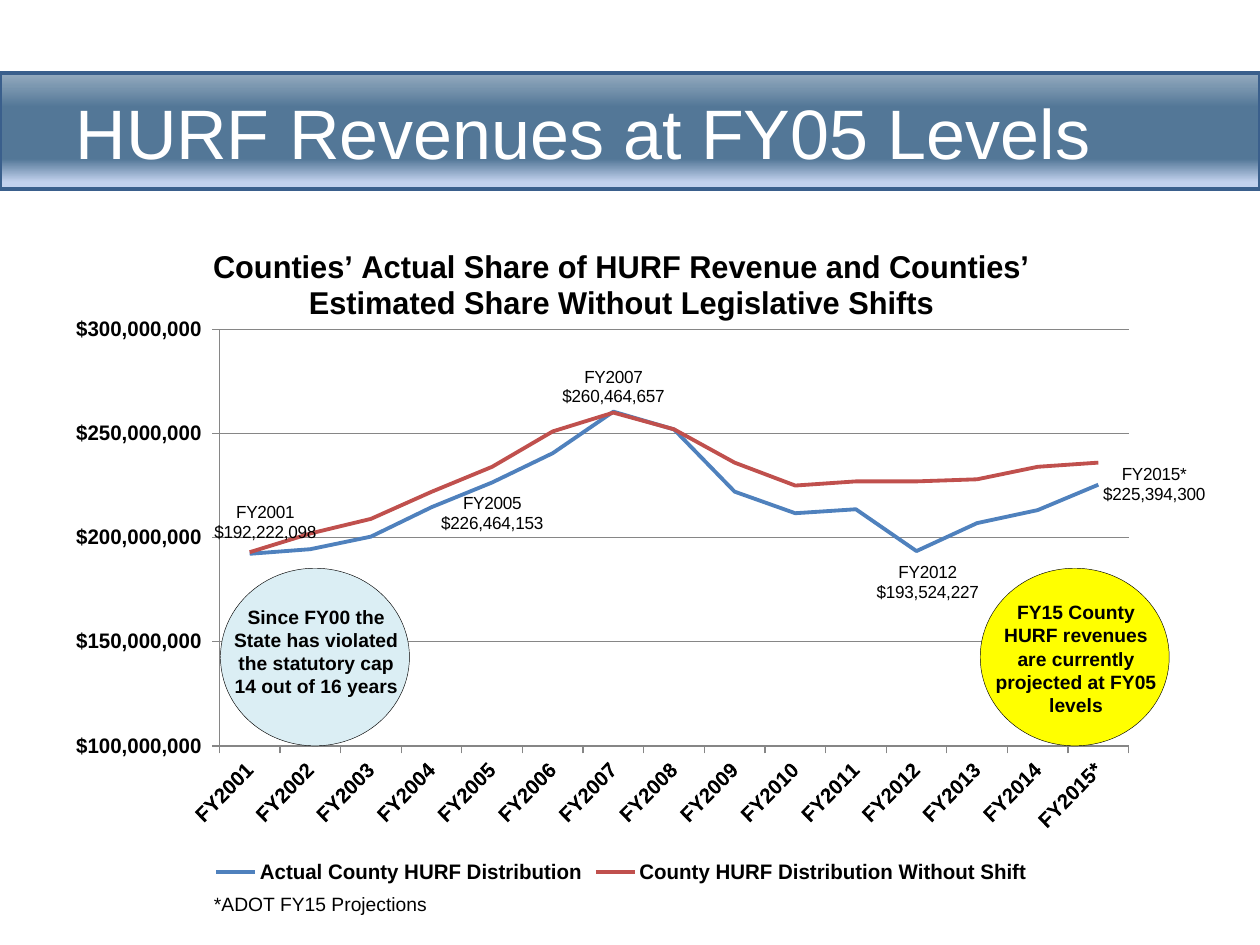
from dataclasses import dataclass

from lxml import etree
from pptx import Presentation
from pptx.chart.data import CategoryChartData
from pptx.dml.color import RGBColor
from pptx.enum.chart import (XL_CHART_TYPE, XL_LABEL_POSITION, XL_LEGEND_POSITION,
                             XL_MARKER_STYLE, XL_TICK_MARK)
from pptx.enum.shapes import MSO_SHAPE
from pptx.enum.text import MSO_ANCHOR, PP_ALIGN
from pptx.oxml import parse_xml
from pptx.oxml.ns import nsdecls, qn
from pptx.util import Inches, Pt

LINE = XL_CHART_TYPE.LINE
ABOVE, BELOW, RIGHT = XL_LABEL_POSITION.ABOVE, XL_LABEL_POSITION.BELOW, XL_LABEL_POSITION.RIGHT
BOTTOM = XL_LEGEND_POSITION.BOTTOM
NO_MARKER = XL_MARKER_STYLE.NONE
OUTSIDE, NO_TICK = XL_TICK_MARK.OUTSIDE, XL_TICK_MARK.NONE
RECT, OVAL = MSO_SHAPE.RECTANGLE, MSO_SHAPE.OVAL
TOP, MIDDLE = MSO_ANCHOR.TOP, MSO_ANCHOR.MIDDLE
LEFT, CENTER = PP_ALIGN.LEFT, PP_ALIGN.CENTER

FONT = "Arial"
BLACK = RGBColor(0x00, 0x00, 0x00)
WHITE = RGBColor(0xFF, 0xFF, 0xFF)
GRID_GRAY = RGBColor(0x86, 0x86, 0x86)
BAND_LINE = RGBColor(0x3A, 0x5F, 0x8C)
BLUE = RGBColor(0x4F, 0x81, 0xBD)
RED = RGBColor(0xC0, 0x50, 0x4D)
PALE_BLUE = RGBColor(0xDB, 0xEE, 0xF4)
YELLOW = RGBColor(0xFF, 0xFF, 0x00)
BAND_STOPS = [
    (2, RGBColor(0x91, 0xA8, 0xBD)),
    (29, RGBColor(0x53, 0x77, 0x97)),
    (74, RGBColor(0x53, 0x77, 0x97)),
    (94, RGBColor(0xC2, 0xD1, 0xED)),
]


@dataclass
class Series:
    name: str
    color: RGBColor
    values: list[int]


@dataclass
class PointLabel:
    index: int
    position: XL_LABEL_POSITION
    dx: float = 0  # shift as a share of the chart width
    dy: float = 0  # shift as a share of the chart height


@dataclass
class Callout:
    text: str
    fill: RGBColor
    left: float
    text_top: float
    text_height: float


YEARS = [f"FY{year}" for year in range(2001, 2015)] + ["FY2015*"]
SERIES = [
    Series("Actual County HURF Distribution", BLUE, [
        192222098, 194432532, 200465084, 214601120, 226464153,
        240538498, 260464657, 251942354, 222055667, 211692930,
        213605033, 193524227, 206965383, 213192319, 225394300]),
    Series("County HURF Distribution Without Shift", RED, [
        million * 1_000_000 for million in (
            193, 202, 209, 222, 234, 251, 260, 252, 236, 225, 227, 227, 228, 234, 236)]),
]
POINT_LABELS = [
    PointLabel(0, ABOVE, 0.014, -0.01),
    PointLabel(4, BELOW, 0, 0.01),
    PointLabel(6, ABOVE),
    PointLabel(11, BELOW, 0.01, 0.01),
    PointLabel(14, RIGHT),
]
PLOT_AREA = {"x": 0.14, "y": 0.163, "w": 0.814, "h": 0.624}
CALLOUTS = [
    Callout("Since FY00 the State has violated the statutory cap 14 out of 16 years",
            PALE_BLUE, 1.75, 4.59, 1.16),
    Callout("FY15 County HURF revenues are currently projected at FY05 levels",
            YELLOW, 7.78, 4.7, 1.05),
]


def style_font(font, size: float, bold: bool = False, color: RGBColor = BLACK) -> None:
    font.name, font.size, font.bold = FONT, Pt(size), bold
    font.color.rgb = color


def write(shape, text: str, *, size: float, bold: bool = False, color: RGBColor = BLACK,
          align=LEFT, anchor=TOP) -> None:
    tf = shape.text_frame
    tf.word_wrap = True
    tf.vertical_anchor = anchor
    p = tf.paragraphs[0]
    p.alignment = align
    r = p.add_run()
    r.text = text
    style_font(r.font, size, bold, color)


def add_box(s, left: float, top: float, width: float, height: float):
    return s.shapes.add_textbox(Inches(left), Inches(top), Inches(width), Inches(height))


def add_outlined(s, kind, left: float, top: float, width: float, height: float,
                 line: RGBColor, weight: float):
    sp = s.shapes.add_shape(kind, Inches(left), Inches(top), Inches(width), Inches(height))
    sp.shadow.inherit = False
    sp.line.color.rgb = line
    sp.line.width = Pt(weight)
    return sp


def add_title(s, text: str) -> None:
    band = add_outlined(s, RECT, 0, 0.58, 10, 0.92, BAND_LINE, 2)
    band.fill.gradient()
    band.fill.gradient_angle = 270
    stops = band._element.spPr.find(f".//{qn('a:gsLst')}")
    for stop in list(stops):
        stops.remove(stop)
    for percent, color in BAND_STOPS:
        stops.append(parse_xml(f'<a:gs {nsdecls("a")} pos="{percent * 1000}">'
                               f'<a:srgbClr val="{color}"/></a:gs>'))
    title = s.shapes.title
    title.left, title.top = Inches(0.5), Inches(0.42)
    title.width, title.height = Inches(9), Inches(1.25)
    band._element.addnext(title._element)
    write(title, text, size=40, color=WHITE, anchor=MIDDLE)


def format_axis(axis) -> None:
    axis.major_tick_mark, axis.minor_tick_mark = OUTSIDE, NO_TICK
    axis.format.line.color.rgb = GRID_GRAY
    style_font(axis.tick_labels.font, 12, True)


def label_points(series) -> None:
    """Show year and value on two lines at the selected points only."""
    labels = series.data_labels
    labels.show_value = False
    style_font(labels.font, 10)
    for point in POINT_LABELS:
        series.points[point.index].data_label.position = point.position
    for label, point in zip(series._element.iter(qn("c:dLbl")), POINT_LABELS):
        label.find(qn("c:showVal")).set("val", "1")
        label.find(qn("c:showCatName")).set("val", "1")
        etree.SubElement(label, qn("c:separator")).text = "\n"
        if point.dx or point.dy:
            label.insert(1, parse_xml(
                f'<c:layout {nsdecls("c")}><c:manualLayout><c:x val="{point.dx}"/>'
                f'<c:y val="{point.dy}"/></c:manualLayout></c:layout>'))


def place_plot_area(chart) -> None:
    area = chart._chartSpace.chart.plotArea
    for old in area.findall(qn("c:layout")):
        area.remove(old)
    modes = "".join(f'<c:{axis}Mode val="edge"/>' for axis in "xy")
    sizes = "".join(f'<c:{key} val="{value}"/>' for key, value in PLOT_AREA.items())
    area.insert(0, parse_xml(
        f'<c:layout {nsdecls("c")}><c:manualLayout><c:layoutTarget val="inner"/>'
        f'{modes}{sizes}</c:manualLayout></c:layout>'))


def add_revenue_chart(s) -> None:
    data = CategoryChartData(number_format='"$"#,##0')
    data.categories = YEARS
    for series in SERIES:
        data.add_series(series.name, series.values)
    chart = s.shapes.add_chart(
        LINE, Inches(0.5), Inches(1.75), Inches(9.08), Inches(5.3), data).chart
    style_font(chart.font, 10)
    chart.has_title = True
    r = chart.chart_title.text_frame.paragraphs[0].add_run()
    r.text = ("Counties’ Actual Share of HURF Revenue and Counties’ "
              "Estimated Share Without Legislative Shifts")
    style_font(r.font, 18, True)
    chart.has_legend = True
    chart.legend.position = BOTTOM
    chart.legend.include_in_layout = False
    style_font(chart.legend.font, 12, True)

    years, dollars = chart.category_axis, chart.value_axis
    format_axis(years)
    years._element.find(f"{qn('c:txPr')}/{qn('a:bodyPr')}").set("rot", "-2700000")
    format_axis(dollars)
    dollars.minimum_scale, dollars.maximum_scale = 100_000_000, 300_000_000
    dollars.major_unit = 50_000_000
    dollars.major_gridlines.format.line.color.rgb = GRID_GRAY
    dollars.tick_labels.number_format = '"$"#,##0_);[Red]\\("$"#,##0\\)'
    dollars.tick_labels.number_format_is_linked = False

    plot = chart.plots[0]
    plot.vary_by_categories = False
    for line, series in zip(plot.series, SERIES):
        line.smooth = False
        line.marker.style = NO_MARKER
        line.format.line.color.rgb = series.color
        line.format.line.width = Pt(2.25)
    label_points(plot.series[0])
    place_plot_area(chart)


def add_callout(s, callout: Callout) -> None:
    oval = add_outlined(s, OVAL, callout.left, 4.51, 1.5, 1.41, BLACK, 0.25)
    oval.fill.solid()
    oval.fill.fore_color.rgb = callout.fill
    box = add_box(s, callout.left, callout.text_top, 1.52, callout.text_height)
    write(box, callout.text, size=11, bold=True, align=CENTER, anchor=MIDDLE)


prs = Presentation()
prs.slide_width, prs.slide_height = Inches(10), Inches(7.5)
s = prs.slides.add_slide(prs.slide_layouts[5])
add_title(s, "HURF Revenues at FY05 Levels")
add_revenue_chart(s)
for callout in CALLOUTS:
    add_callout(s, callout)
write(add_box(s, 1.6, 7.03, 3.33, 0.47), "*ADOT FY15 Projections", size=11)
prs.save("out.pptx")
